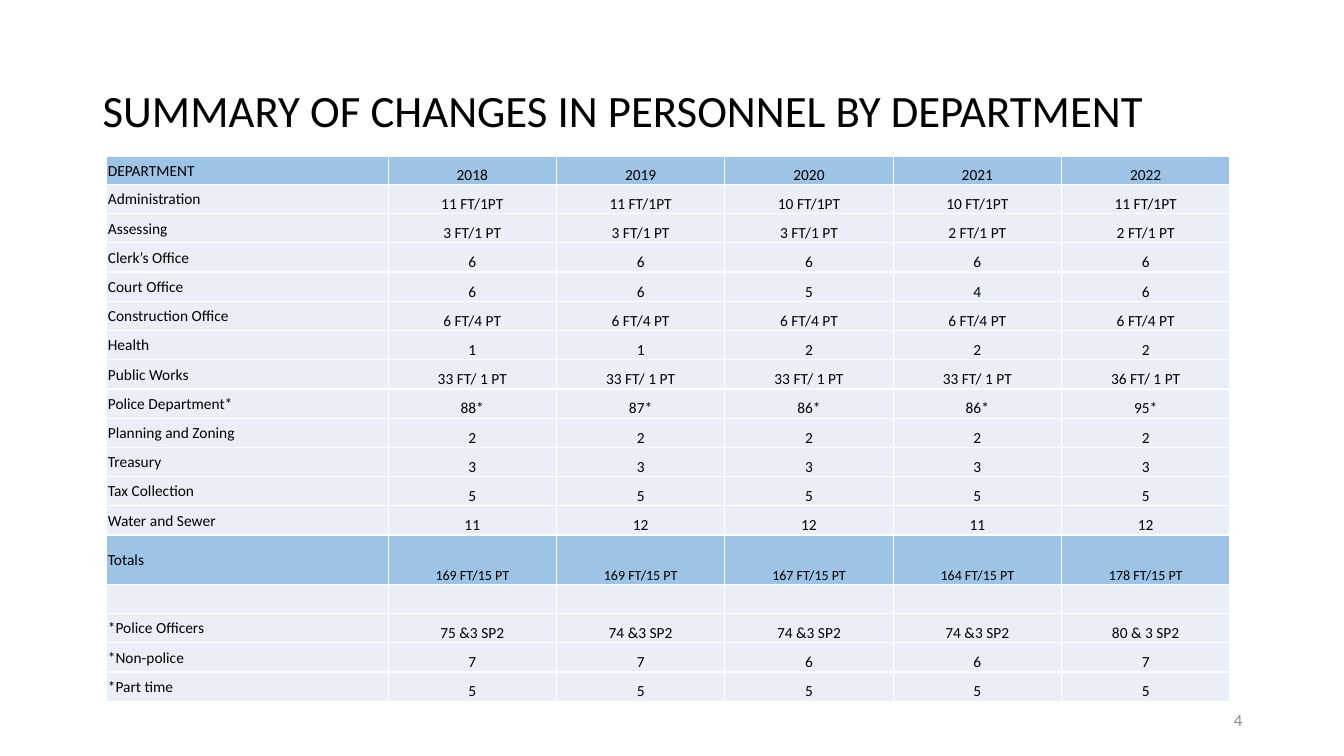
from dataclasses import dataclass

from lxml.etree import SubElement
from pptx import Presentation
from pptx.dml.color import RGBColor
from pptx.enum.text import MSO_ANCHOR, PP_ALIGN
from pptx.oxml.ns import qn
from pptx.util import Emu, Pt

SCALE = 9144  # EMU in one px, 100 px to the inch


@dataclass(frozen=True)
class Theme:
    font: str = "Calibri"
    ink: str = "000000"
    grey: str = "8C8C8C"
    head: str = "9DC3E6"
    body: str = "EAEFF7"
    rule: str = "FFFFFF"
    title: int = 32
    cell: int = 11
    total: int = 10
    page: int = 12


THEME = Theme()

COLS = [279] + [167] * 5
ROWS = [
    ["DEPARTMENT", "2018", "2019", "2020", "2021", "2022"],
    ["Administration", "11 FT/1PT", "11 FT/1PT", "10 FT/1PT", "10 FT/1PT", "11 FT/1PT"],
    ["Assessing", "3 FT/1 PT", "3 FT/1 PT", "3 FT/1 PT", "2 FT/1 PT", "2 FT/1 PT"],
    ["Clerk’s Office", "6", "6", "6", "6", "6"],
    ["Court Office", "6", "6", "5", "4", "6"],
    ["Construction Office"] + ["6 FT/4 PT"] * 5,
    ["Health", "1", "1", "2", "2", "2"],
    ["Public Works"] + ["33 FT/ 1 PT"] * 4 + ["36 FT/ 1 PT"],
    ["Police Department*", "88*", "87*", "86*", "86*", "95*"],
    ["Planning and Zoning", "2", "2", "2", "2", "2"],
    ["Treasury", "3", "3", "3", "3", "3"],
    ["Tax Collection", "5", "5", "5", "5", "5"],
    ["Water and Sewer", "11", "12", "12", "11", "12"],
    ["Totals", "169 FT/15 PT", "169 FT/15 PT", "167 FT/15 PT", "164 FT/15 PT",
     "178 FT/15 PT"],
    [""] * 6,
    ["*Police Officers", "75 &3 SP2", "74 &3 SP2", "74 &3 SP2", "74 &3 SP2", "80 & 3 SP2"],
    ["*Non-police", "7", "7", "6", "6", "7"],
    ["*Part time", "5", "5", "5", "5", "5"],
]
HEIGHTS = {"DEPARTMENT": 28, "Totals": 49}


def px(n):
    return Emu(n * SCALE)


def style(para, size, color, align):
    para.alignment = align
    for run in para.runs:
        run.font.name = THEME.font
        run.font.size = Pt(size)
        run.font.color.rgb = RGBColor.from_string(color)


def add_text(slide, box, text, size, color, align=PP_ALIGN.LEFT):
    frame = slide.shapes.add_textbox(*map(px, box)).text_frame
    frame.word_wrap = True
    frame.vertical_anchor = MSO_ANCHOR.MIDDLE
    frame.text = text
    para = frame.paragraphs[0]
    para.line_spacing = 0.9
    style(para, size, color, align)


def add_rules(cell):
    """Draw a thin line on all four sides of the cell."""
    props = cell._tc.get_or_add_tcPr()
    for side in ("lnL", "lnR", "lnT", "lnB"):
        line = SubElement(props, qn(f"a:{side}"), w=str(Pt(1)))
        fill = SubElement(line, qn("a:solidFill"))
        SubElement(fill, qn("a:srgbClr"), val=THEME.rule)


def fill_cell(cell, text, size, color, first):
    add_rules(cell)
    cell.fill.solid()
    cell.fill.fore_color.rgb = RGBColor.from_string(color)
    cell.margin_left = cell.margin_right = cell.margin_top = px(1)
    cell.margin_bottom = 0
    cell.vertical_anchor = MSO_ANCHOR.MIDDLE if first else MSO_ANCHOR.BOTTOM
    cell.text = text
    para = cell.text_frame.paragraphs[0]
    style(para, size, THEME.ink, PP_ALIGN.LEFT if first else PP_ALIGN.CENTER)
    if not text:  # keeps the empty row from growing
        SubElement(para._p, qn("a:endParaRPr"), sz=str(size * 100))


def add_grid(slide, left, top):
    tall = [HEIGHTS.get(row[0], 29) for row in ROWS]
    frame = slide.shapes.add_table(
        len(ROWS), len(COLS), px(left), px(top), px(sum(COLS)), px(sum(tall)))
    table = frame.table
    table.first_row = table.horz_banding = False
    for col, width in zip(table.columns, COLS):
        col.width = px(width)
    for line, height, row in zip(table.rows, tall, ROWS):
        line.height = px(height)
        color = THEME.head if row[0] in HEIGHTS else THEME.body
        for i, (cell, text) in enumerate(zip(line.cells, row)):
            small = row[0] == "Totals" and i > 0
            fill_cell(cell, text, THEME.total if small else THEME.cell, color, i == 0)


def main():
    deck = Presentation()
    deck.slide_width, deck.slide_height = px(1333), px(750)
    slide = deck.slides.add_slide(deck.slide_layouts[6])
    add_text(slide, (92, 40, 1150, 145), "SUMMARY OF CHANGES IN PERSONNEL BY DEPARTMENT",
             THEME.title, THEME.ink)
    add_text(slide, (942, 695, 300, 40), "4", THEME.page, THEME.grey, PP_ALIGN.RIGHT)
    add_grid(slide, 106, 155)
    deck.save("out.pptx")


if __name__ == "__main__":
    main()
